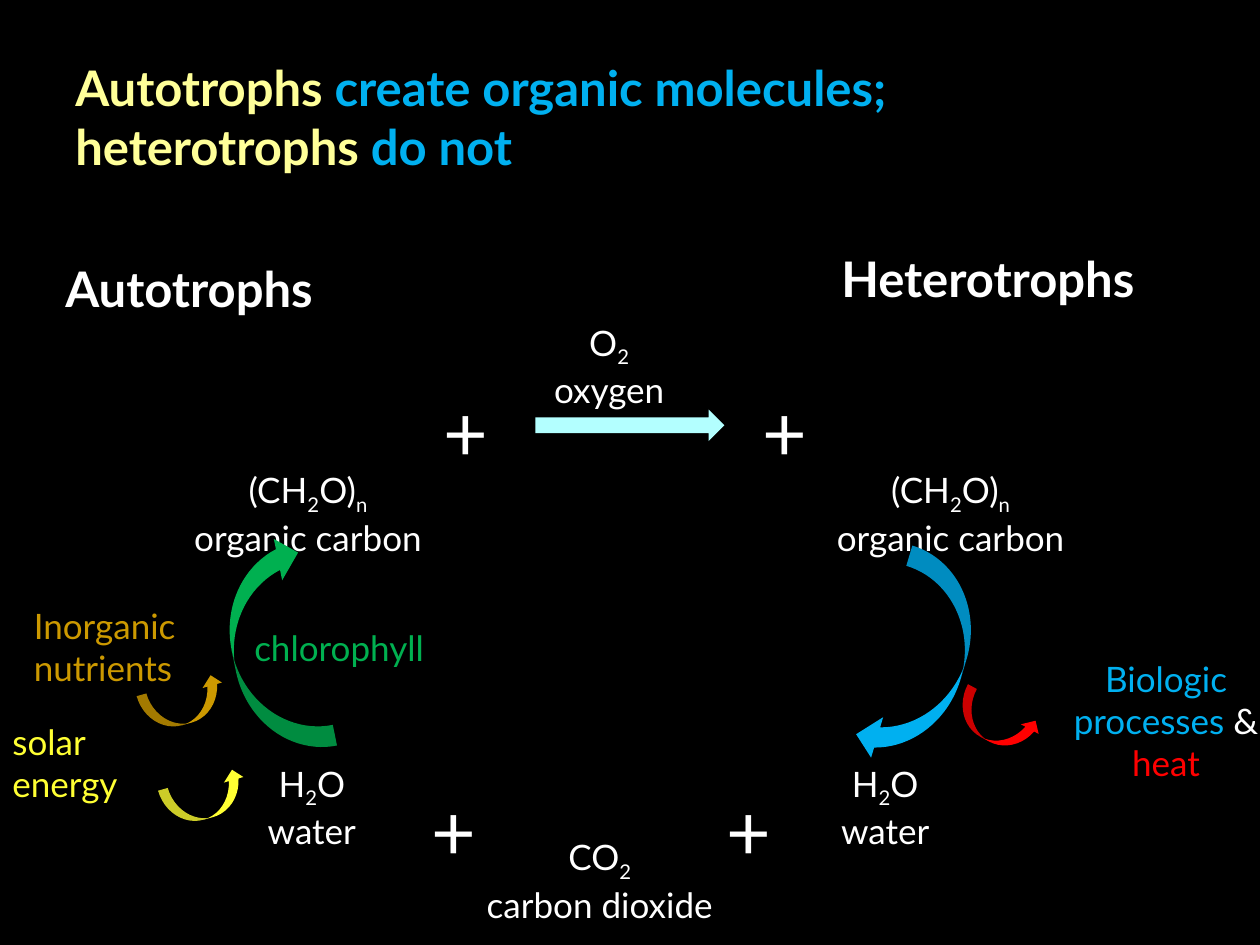
from pptx import Presentation
from pptx import util as u
from pptx.dml.color import RGBColor
from pptx.enum import shapes, text

BLACK = RGBColor(0x00, 0x00, 0x00)
WHITE = RGBColor(0xFF, 0xFF, 0xFF)
CREAM = RGBColor(0xFF, 0xFF, 0x99)
BLUE = RGBColor(0x00, 0xB0, 0xF0)
RED = RGBColor(0xFF, 0x00, 0x00)
YELLOW = RGBColor(0xFF, 0xFF, 0x33)
OCHRE = RGBColor(0xCC, 0x99, 0x00)
GREEN = RGBColor(0x00, 0xB0, 0x50)
PALE_CYAN = RGBColor(0xB3, 0xFF, 0xFF)

LEFT = text.PP_ALIGN.LEFT
CENTER = text.PP_ALIGN.CENTER
ARROW = shapes.MSO_SHAPE


class CycleSlide:
    font = "Lato"

    def __init__(self, slide):
        self.slide = slide
        slide.background.fill.solid()
        slide.background.fill.fore_color.rgb = BLACK

    def box(self, at, wrap=False):
        frame = self.slide.shapes.add_textbox(*map(u.Inches, at)).text_frame
        frame.word_wrap = wrap
        frame.auto_size = text.MSO_AUTO_SIZE.SHAPE_TO_FIT_TEXT
        return frame

    def run(self, paragraph, words, color=WHITE, size=20, bold=False, subscript=False):
        run = paragraph.add_run()
        run.text = words
        run.font.name = self.font
        run.font.size = u.Pt(size)
        run.font.bold = bold
        run.font.color.rgb = color
        if subscript:
            run._r.get_or_add_rPr().set("baseline", "-25000")

    def title(self, at, lines):
        frame = self.box(at, wrap=True)
        frame.auto_size = text.MSO_AUTO_SIZE.NONE
        frame.vertical_anchor = text.MSO_ANCHOR.MIDDLE
        paragraph = frame.paragraphs[0]
        for number, line in enumerate(lines):
            if number:
                paragraph.add_line_break()
            for words, color in line:
                self.run(paragraph, words, color, 28, True)

    def label(self, at, runs, align=LEFT, wrap=False, size=20, bold=False):
        paragraph = self.box(at, wrap).paragraphs[0]
        paragraph.alignment = align
        for words, color in runs:
            self.run(paragraph, words, color, size, bold)

    def molecule(self, at, formula, name):
        frame = self.box(at)
        formula_line, name_line = frame.paragraphs[0], frame.add_paragraph()
        formula_line.alignment = name_line.alignment = CENTER
        for position, part in enumerate(formula):
            self.run(formula_line, part, subscript=position % 2 == 1)
        self.run(name_line, name)

    def arrow(self, kind, at, color, rotation=0):
        arrow = self.slide.shapes.add_shape(kind, *map(u.Inches, at))
        arrow.shadow.inherit = False
        arrow.fill.solid()
        arrow.fill.fore_color.rgb = color
        arrow.line.fill.background()
        arrow.rotation = rotation


def main():
    deck = Presentation()
    deck.slide_width, deck.slide_height = u.Inches(10), u.Inches(7.5)
    cycle = CycleSlide(deck.slides.add_slide(deck.slide_layouts[6]))

    cycle.title((0.5, 0.3, 9, 1.25), [
        [("Autotrophs", CREAM), (" create organic molecules; ", BLUE)],
        [("heterotrophs", CREAM), (" do not", BLUE)],
    ])
    cycle.label((0.42, 2, 2.35, 0.57), [("Autotrophs", WHITE)], size=28, bold=True)
    cycle.label((6.58, 1.92, 2.77, 0.57), [("Heterotrophs", WHITE)], size=28, bold=True)

    cycle.molecule((4.25, 2.5, 1.17, 0.77), ("O", "2"), "oxygen")
    for carbon_left, water_left in ((1.33, 2), (6.43, 6.55)):
        cycle.molecule((carbon_left, 3.67, 2.23, 0.77), ("(CH", "2", "O)", "n"), "organic carbon")
        cycle.molecule((water_left, 6, 0.95, 0.77), ("H", "2", "O"), "water")
    cycle.molecule((3.67, 6.58, 2.18, 0.77), ("CO", "2"), "carbon dioxide")

    cycle.label((8.42, 5.17, 1.67, 1.11),
                [("Biologic processes ", BLUE), ("& ", WHITE), ("heat", RED)], CENTER, wrap=True)
    cycle.label((0, 5.67, 1.17, 0.77), [("solar energy", YELLOW)], wrap=True)
    cycle.label((0.17, 4.75, 1.5, 0.77), [("Inorganic nutrients", OCHRE)], wrap=True)
    cycle.label((1.92, 4.92, 1.66, 0.44), [("chlorophyll", GREEN)])
    for left, top in ((3.42, 3), (5.95, 3), (5.67, 6.17), (3.33, 6.17)):
        cycle.label((left, top, 0.55, 0.84), [("+", WHITE)], size=44)

    cycle.arrow(ARROW.RIGHT_ARROW, (4.25, 3.25, 1.5, 0.25), PALE_CYAN)
    for left, top, color, rotation in ((1.84, 4.27, GREEN, 168.6), (6.98, 4.39, BLUE, 16.6)):
        cycle.arrow(ARROW.CURVED_LEFT_ARROW, (left, top, 0.67, 1.73), color, rotation)
    for left, top, color, rotation in (
        (7.75, 5.39, RED, 298.4), (1.3, 5.24, OCHRE, 254.2), (1.47, 5.99, YELLOW, 254.2),
    ):
        cycle.arrow(ARROW.CURVED_RIGHT_ARROW, (left, top, 0.32, 0.69), color, rotation)

    deck.save("out.pptx")


if __name__ == "__main__":
    main()
